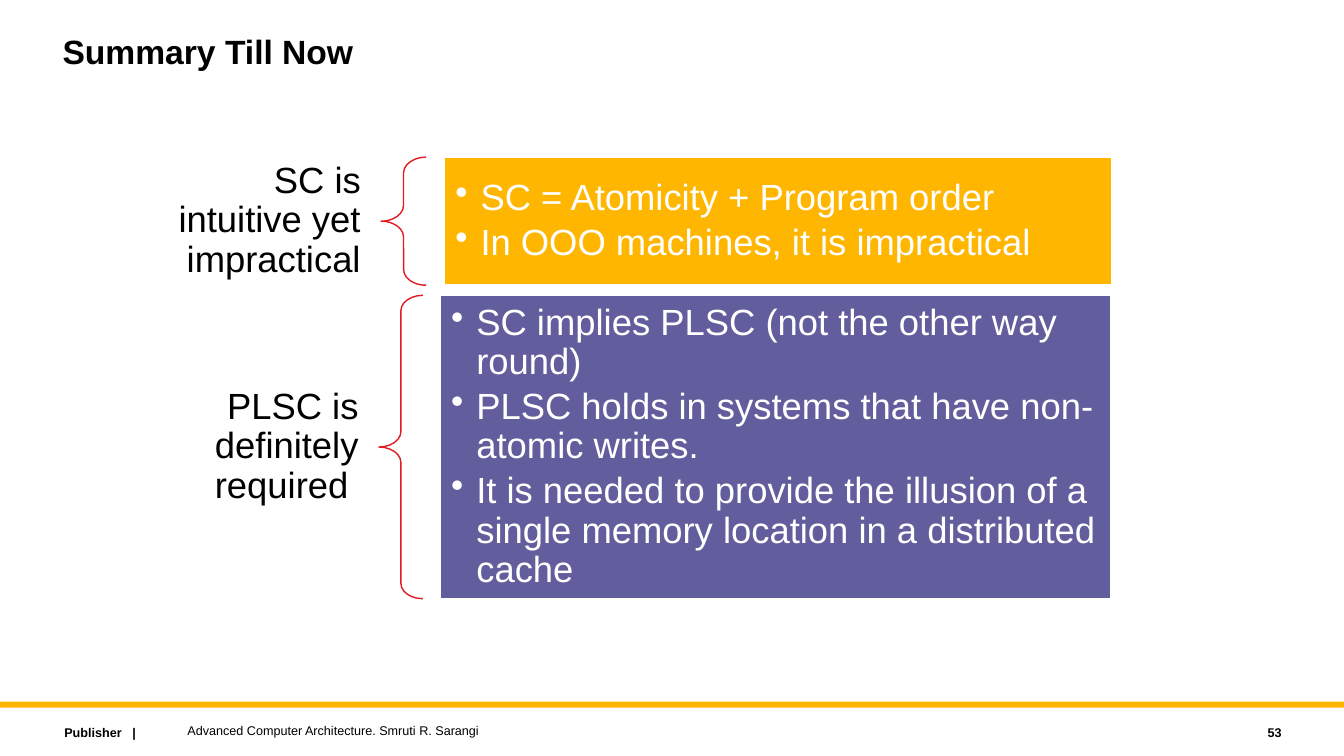
from lxml.etree import SubElement
from pptx import Presentation
from pptx.dml.color import RGBColor
from pptx.enum.shapes import MSO_SHAPE
from pptx.enum.text import MSO_ANCHOR, MSO_AUTO_SIZE, PP_ALIGN
from pptx.oxml.ns import qn
from pptx.util import Emu, Inches, Pt

WIDTH, HEIGHT = 13.33, 7.5
FONT = "Arial"
BLACK, WHITE, AMBER, PURPLE, RED = "000000", "FFFFFF", "FFB600", "625D9C", "E21A23"
LABEL_HEIGHT = 1.27
BULLET_INDENT = Inches(0.25)


def color(hex_string):
    return RGBColor.from_string(hex_string)


def add_bullet(paragraph):
    properties = paragraph._p.get_or_add_pPr()
    properties.set("marL", str(BULLET_INDENT))
    properties.set("indent", str(-BULLET_INDENT))
    SubElement(properties, qn("a:buChar")).set("char", "•")


def write(holder, lines, size=26, ink=BLACK, bold=False, align=PP_ALIGN.LEFT,
          anchor=MSO_ANCHOR.MIDDLE, insets=(0.1, 0.05), spacing=None,
          after=0, bullets=False):
    frame = holder.text_frame
    frame.word_wrap = True
    frame.auto_size = MSO_AUTO_SIZE.NONE
    frame.vertical_anchor = anchor
    frame.margin_left = frame.margin_right = Inches(insets[0])
    frame.margin_top = frame.margin_bottom = Inches(insets[1])
    for index, line in enumerate(lines):
        paragraph = frame.add_paragraph() if index else frame.paragraphs[0]
        paragraph.text = line
        paragraph.alignment = align
        paragraph.space_after = Pt(after)
        if spacing:
            paragraph.line_spacing = spacing
        if bullets:
            add_bullet(paragraph)
        font = paragraph.font
        font.name, font.size, font.bold = FONT, Pt(size), bold
        font.color.rgb = color(ink)


def add_text(slide, box, lines, **style):
    write(slide.shapes.add_textbox(*map(Inches, box)), lines, **style)


def add_figure(slide, kind, box, fill=None, line=None):
    figure = slide.shapes.add_shape(kind, *map(Inches, box))
    figure.shadow.inherit = False
    if fill:
        figure.fill.solid()
        figure.fill.fore_color.rgb = color(fill)
    else:
        figure.fill.background()
    if line:
        figure.line.color.rgb = color(line)
        figure.line.width = Pt(1)
    else:
        figure.line.fill.background()
    return figure


def add_title(slide, box, wording):
    title = slide.shapes.title
    title.left, title.top, title.width, title.height = map(Inches, box)
    write(title, [wording], size=24, bold=True, anchor=MSO_ANCHOR.TOP, spacing=0.9)


def add_section(slide, box, columns, label, points, fill):
    """Label, brace and bulleted panel side by side; columns are shares of the width."""
    left, top, width, height = box
    label_width, brace_width, gap, panel_width = (width * share for share in columns)
    brace_left = left + label_width
    panel_left = brace_left + brace_width + gap

    label_top = top + (height - LABEL_HEIGHT) / 2
    add_text(slide, (left, label_top, label_width, LABEL_HEIGHT), [label],
             align=PP_ALIGN.RIGHT, insets=(0.2, 0.07), spacing=0.9)
    brace = add_figure(slide, MSO_SHAPE.LEFT_BRACE,
                       (brace_left, top, brace_width, height), line=RED)
    brace.adjustments[0] = 0.35
    panel = add_figure(slide, MSO_SHAPE.RECTANGLE,
                       (panel_left, top, panel_width, height), fill, WHITE)
    write(panel, points, ink=WHITE, insets=(0.11, 0.11), spacing=0.9,
          after=4, bullets=True)


def add_footer(slide, box):
    left, top, width, height = box
    add_figure(slide, MSO_SHAPE.RECTANGLE, (left, top, width, 0.06), AMBER)
    text_top, text_height = top + 0.18, 0.25
    add_text(slide, (left + 0.54, text_top, 1.2, text_height), ["Publisher   |"],
             size=9, bold=True)
    add_text(slide, (left + 1.76, text_top - 0.02, width * 0.6, text_height),
             ["Advanced Computer Architecture. Smruti R. Sarangi"], size=9)
    add_text(slide, (left + width - 1.92, text_top, 1.4, text_height), ["53"],
             size=9, bold=True, align=PP_ALIGN.RIGHT)


def main():
    deck = Presentation()
    deck.slide_width, deck.slide_height = Inches(WIDTH), Inches(HEIGHT)
    slide = deck.slides.add_slide(deck.slide_layouts[5])
    add_title(slide, (0.52, 0.3, 10, 0.9), "Summary Till Now")
    add_section(slide, (1.54, 1.56, 9.49, 1.27), (0.236, 0.047, 0.019, 0.698),
                "SC is intuitive yet impractical",
                ["SC = Atomicity + Program order",
                 "In OOO machines, it is impractical"], AMBER)
    add_section(slide, (1.54, 2.93, 9.48, 3.01), (0.234, 0.046, 0.018, 0.702),
                "PLSC is definitely required ",
                ["SC implies PLSC (not the other way round)",
                 "PLSC holds in systems that have non-atomic writes.",
                 "It is needed to provide the illusion of a single memory "
                 "location in a distributed cache"], PURPLE)
    add_footer(slide, (0, 6.96, WIDTH, HEIGHT - 6.96))
    deck.save("out.pptx")


if __name__ == "__main__":
    main()
